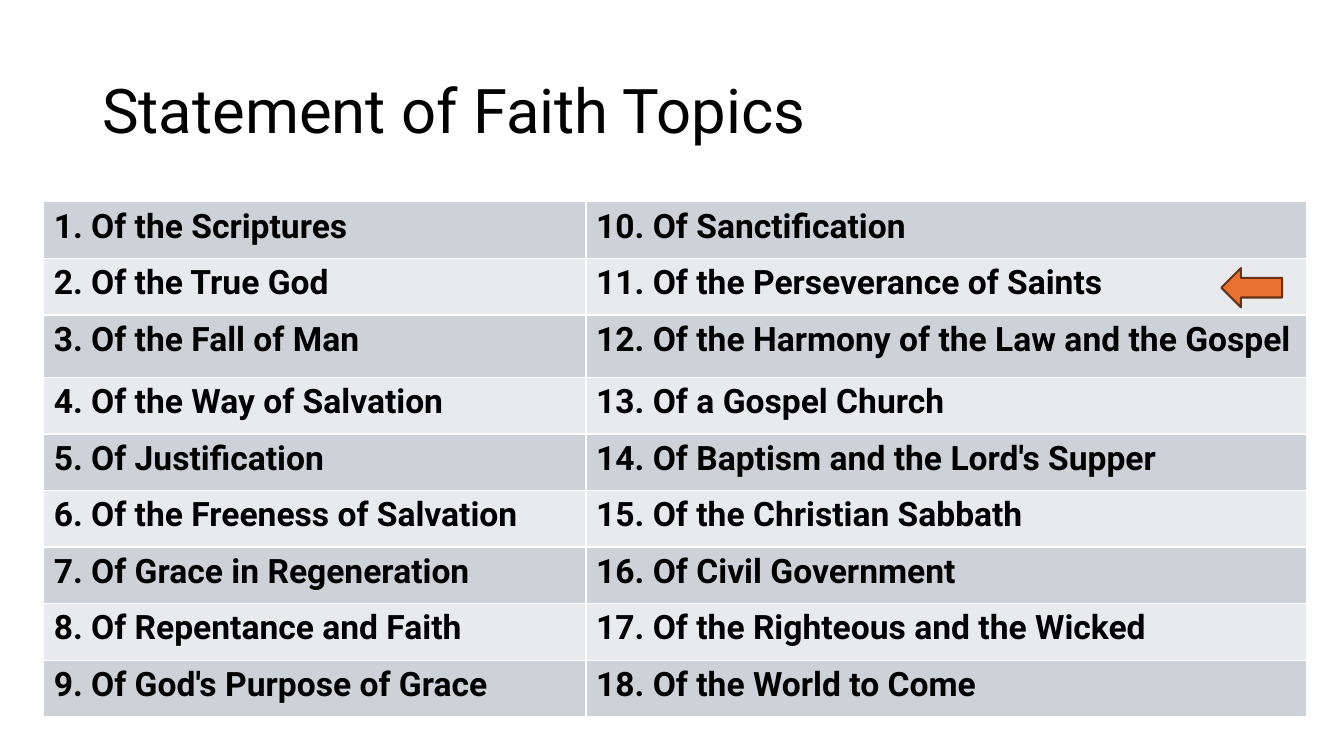
from lxml.etree import SubElement
from pptx import Presentation
from pptx.dml.color import RGBColor
from pptx.enum.shapes import MSO_SHAPE as SHAPE
from pptx.enum.text import MSO_ANCHOR as ANCHOR
from pptx.oxml.ns import qn
from pptx.util import Pt

TITLE = "Statement of Faith Topics"
TOPICS = [
    "Of the Scriptures",
    "Of the True God",
    "Of the Fall of Man",
    "Of the Way of Salvation",
    "Of Justification",
    "Of the Freeness of Salvation",
    "Of Grace in Regeneration",
    "Of Repentance and Faith",
    "Of God's Purpose of Grace",
    "Of Sanctification",
    "Of the Perseverance of Saints",
    "Of the Harmony of the Law and the Gospel",
    "Of a Gospel Church",
    "Of Baptism and the Lord's Supper",
    "Of the Christian Sabbath",
    "Of Civil Government",
    "Of the Righteous and the Wicked",
    "Of the World to Come",
]
BANDS = ["CCD2D8", "E8EAED"]
COL_WIDTHS = [387.4, 514.8]
ROWS = len(TOPICS) // len(COL_WIDTHS)
ROW_HEIGHT, TALL_HEIGHT, TALL_ROW = 40.4, 44.6, 2
ROW_HEIGHTS = [TALL_HEIGHT if i == TALL_ROW else ROW_HEIGHT for i in range(ROWS)]


def rgb(color):
    return RGBColor.from_string(color)


def write(tf, text, size, bold=False, spacing=1.0, color="000000", font="Roboto"):
    p = tf.paragraphs[0]
    p.line_spacing = spacing
    r = p.add_run()
    r.text = text
    r.font.name, r.font.size, r.font.bold = font, Pt(size), bold
    r.font.color.rgb = rgb(color)


def add_borders(cell, color="FFFFFF", width=1):
    tc_pr = cell._tc.get_or_add_tcPr()
    for side in ("lnL", "lnR", "lnT", "lnB"):
        ln = SubElement(tc_pr, qn(f"a:{side}"), w=str(Pt(width)))
        fill = SubElement(ln, qn("a:solidFill"))
        SubElement(fill, qn("a:srgbClr"), val=color)


prs = Presentation()
prs.slide_width, prs.slide_height = Pt(960), Pt(540)
s = prs.slides.add_slide(prs.slide_layouts[6])

title = s.shapes.add_textbox(Pt(66), Pt(28.8), Pt(828), Pt(104.4))
tf = title.text_frame
tf.word_wrap = True
tf.vertical_anchor = ANCHOR.MIDDLE
write(tf, TITLE, 44, spacing=0.9)

frame = s.shapes.add_table(ROWS, len(COL_WIDTHS), Pt(31.2), Pt(144.2),
                           Pt(sum(COL_WIDTHS)), Pt(sum(ROW_HEIGHTS)))
table = frame.table
table.first_row = table.horz_banding = False
for column, width in zip(table.columns, COL_WIDTHS):
    column.width = Pt(width)
for row, height in zip(table.rows, ROW_HEIGHTS):
    row.height = Pt(height)

for i, topic in enumerate(TOPICS):
    col, row = divmod(i, ROWS)
    cell = table.cell(row, col)
    add_borders(cell)
    cell.fill.solid()
    cell.fill.fore_color.rgb = rgb(BANDS[row % 2])
    write(cell.text_frame, f"{i + 1}. {topic}", 24, bold=True)

arrow = s.shapes.add_shape(SHAPE.LEFT_ARROW, Pt(872.4), Pt(191.5), Pt(43.4), Pt(28))
arrow.shadow.inherit = False
arrow.fill.solid()
arrow.fill.fore_color.rgb = rgb("E97132")
arrow.line.color.rgb = rgb("663216")
arrow.line.width = Pt(1.5)

prs.save("out.pptx")
